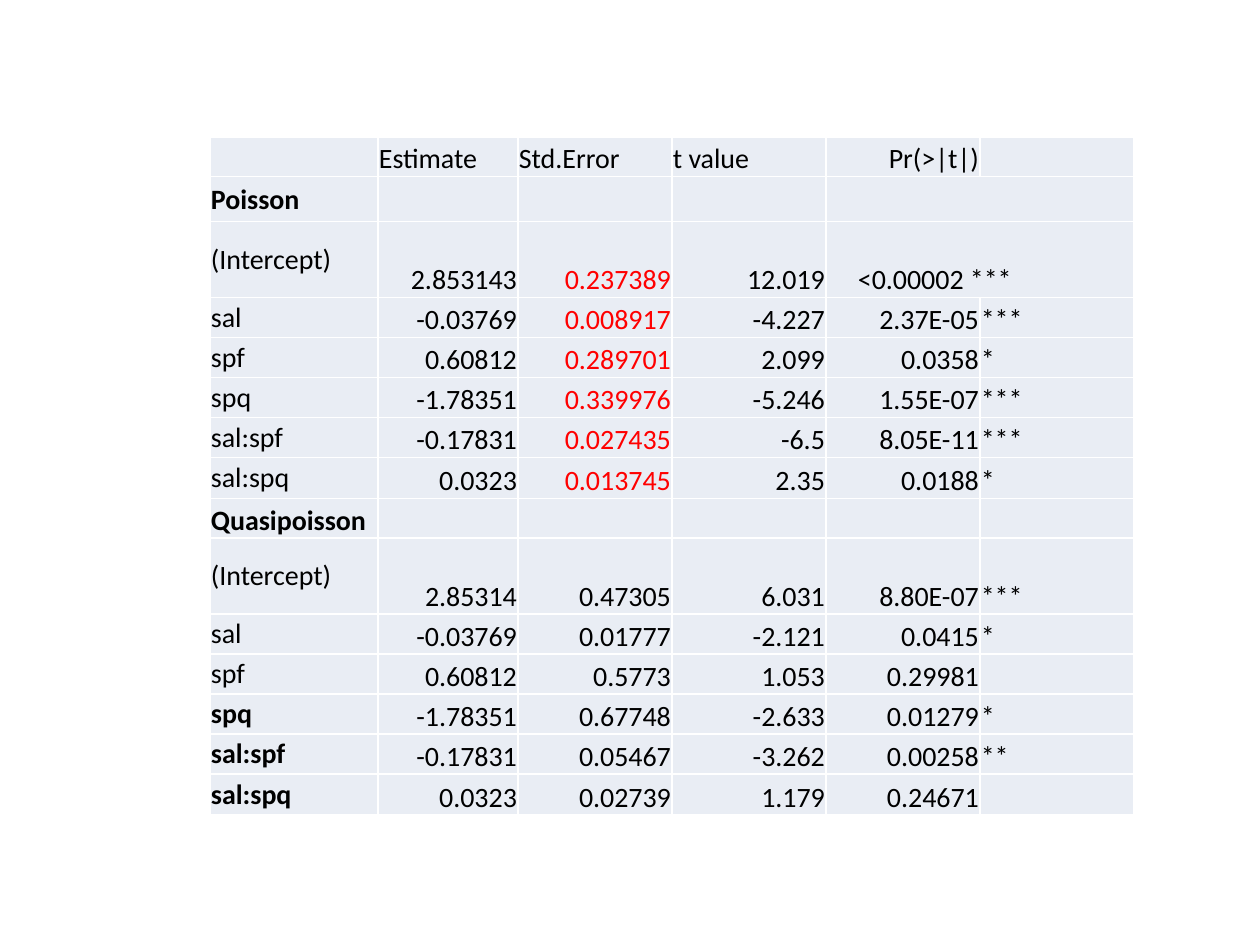
"""Build a slide comparing Poisson and quasi-Poisson regression coefficients."""
import lxml.etree
import pptx
import pptx.dml.color
import pptx.enum.text
import pptx.oxml.ns
import pptx.util

PX = 914400 / 126
COLORS = {"text": "000000", "error": "FF0000", "cell": "E9EDF4", "border": "FFFFFF"}
FONT = "Calibri"
FONT_SIZE = 16

COLUMN_WIDTHS = [168, 140] + [154] * 4
COEFFICIENT_HEIGHTS = [76, 40, 40, 40, 40, 41]
ROW_HEIGHTS = [38, 45] + COEFFICIENT_HEIGHTS + [38] + COEFFICIENT_HEIGHTS

HEADER = ["", "Estimate", "Std.Error", "t value", "Pr(>|t|)", ""]
POISSON = [
    ["(Intercept)", "2.853143", "0.237389", "12.019", "<0.00002 ***", ""],
    ["sal", "-0.03769", "0.008917", "-4.227", "2.37E-05", "***"],
    ["spf", "0.60812", "0.289701", "2.099", "0.0358", "*"],
    ["spq", "-1.78351", "0.339976", "-5.246", "1.55E-07", "***"],
    ["sal:spf", "-0.17831", "0.027435", "-6.5", "8.05E-11", "***"],
    ["sal:spq", "0.0323", "0.013745", "2.35", "0.0188", "*"],
]
QUASIPOISSON = [
    ["(Intercept)", "2.85314", "0.47305", "6.031", "8.80E-07", "***"],
    ["sal", "-0.03769", "0.01777", "-2.121", "0.0415", "*"],
    ["spf", "0.60812", "0.5773", "1.053", "0.29981", ""],
    ["spq", "-1.78351", "0.67748", "-2.633", "0.01279", "*"],
    ["sal:spf", "-0.17831", "0.05467", "-3.262", "0.00258", "**"],
    ["sal:spq", "0.0323", "0.02739", "1.179", "0.24671", ""],
]
ROWS = [HEADER, ["Poisson"] + [""] * 5, *POISSON, ["Quasipoisson"] + [""] * 5, *QUASIPOISSON]
POISSON_ROWS = range(2, 8)
QUASIPOISSON_TITLE = 8
BOLD_LABEL_ROWS = {1, 8, 12, 13, 14}
MERGED_ROWS = (1, 2)
P_COLUMN = 4


def emu(px):
    """Convert pixels to EMU."""
    return pptx.util.Emu(round(px * PX))


def rgb(name):
    """Look up a named colour."""
    return pptx.dml.color.RGBColor.from_string(COLORS[name])


def add_borders(cell):
    """Draw a thin line on all four sides of a cell."""
    qn = pptx.oxml.ns.qn
    properties = cell._tc.get_or_add_tcPr()
    for position, side in enumerate(("lnL", "lnR", "lnT", "lnB")):
        line = lxml.etree.Element(qn(f"a:{side}"), w=str(pptx.util.Pt(1)))
        fill = lxml.etree.SubElement(line, qn("a:solidFill"))
        lxml.etree.SubElement(fill, qn("a:srgbClr"), val=COLORS["border"])
        properties.insert(position, line)


def style_cell(cell):
    """Set the fill, borders and margins of a cell."""
    cell.fill.solid()
    cell.fill.fore_color.rgb = rgb("cell")
    add_borders(cell)
    cell.margin_left = cell.margin_right = cell.margin_top = emu(1)
    cell.margin_bottom = 0


def write_cell(cell, text, color, bold, align, anchor):
    """Write formatted text into a cell."""
    cell.vertical_anchor = anchor
    cell.text_frame.text = text
    paragraph = cell.text_frame.paragraphs[0]
    paragraph.alignment = align
    for run in paragraph.runs:
        run.font.name = FONT
        run.font.size = pptx.util.Pt(FONT_SIZE)
        run.font.bold = bold
        run.font.color.rgb = rgb(color)


def fill_cell(cell, row, column):
    """Fill a cell by the rules of its row and column."""
    anchors = pptx.enum.text.MSO_ANCHOR
    aligns = pptx.enum.text.PP_ALIGN
    style_cell(cell)
    text = ROWS[row][column]
    if not text:
        return
    is_label = column == 0
    is_number = column == P_COLUMN or (row > 0 and 0 < column < P_COLUMN)
    is_merged = cell.is_merge_origin
    if is_merged:
        cell.margin_left = emu(32)
    write_cell(
        cell,
        text,
        color="error" if column == 2 and row in POISSON_ROWS else "text",
        bold=is_label and row in BOLD_LABEL_ROWS,
        align=aligns.RIGHT if is_number and not is_merged else aligns.LEFT,
        anchor=anchors.MIDDLE if is_label and row != QUASIPOISSON_TITLE else anchors.BOTTOM,
    )


def add_coefficients(slide):
    """Add the table of coefficients."""
    table = slide.shapes.add_table(
        len(ROWS), len(HEADER), emu(210), emu(137),
        emu(sum(COLUMN_WIDTHS)), emu(sum(ROW_HEIGHTS)),
    ).table
    table.first_row = table.horz_banding = False
    for column, width in zip(table.columns, COLUMN_WIDTHS):
        column.width = emu(width)
    for row, height in zip(table.rows, ROW_HEIGHTS):
        row.height = emu(height)
    for row in MERGED_ROWS:
        table.cell(row, P_COLUMN).merge(table.cell(row, P_COLUMN + 1))
    for row in range(len(ROWS)):
        for column in range(len(HEADER)):
            fill_cell(table.cell(row, column), row, column)


def main():
    """Build and save the presentation."""
    presentation = pptx.Presentation()
    presentation.slide_width = emu(1260)
    presentation.slide_height = emu(945)
    slide = presentation.slides.add_slide(presentation.slide_layouts[6])
    add_coefficients(slide)
    presentation.save("out.pptx")


if __name__ == "__main__":
    main()
